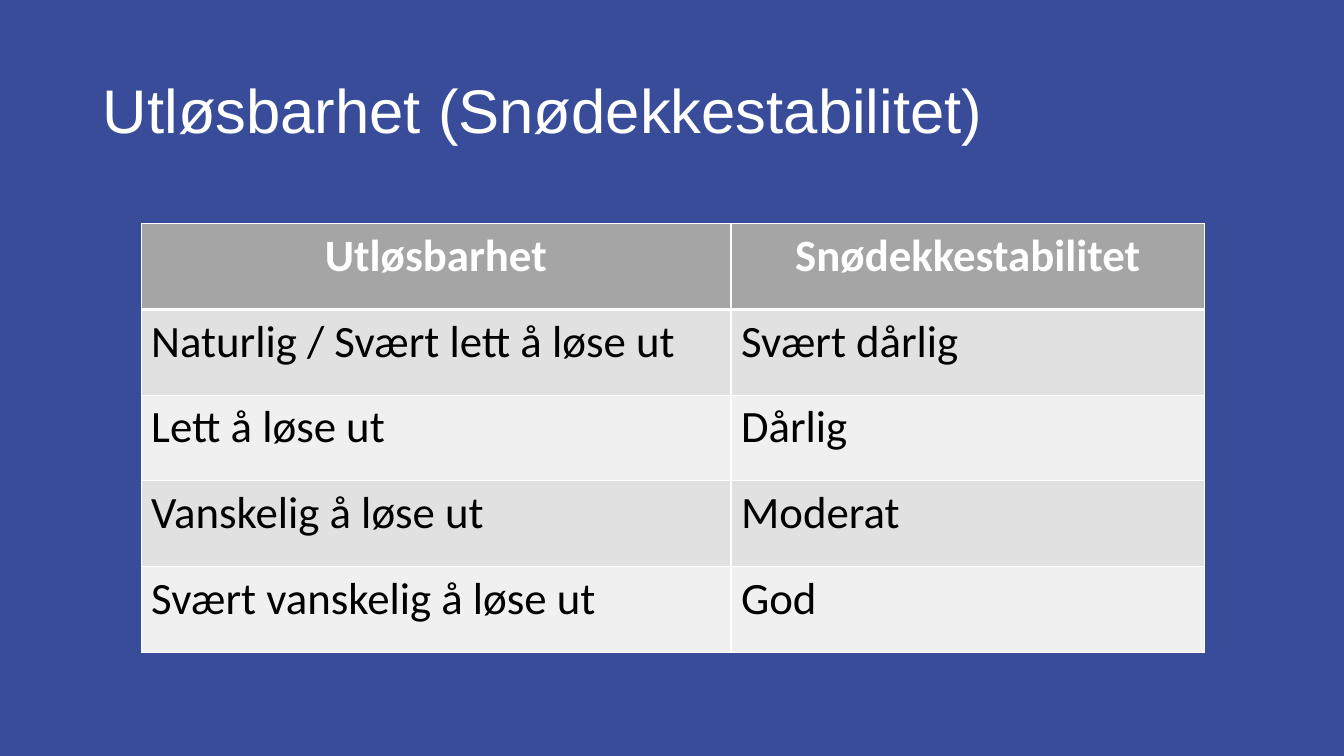
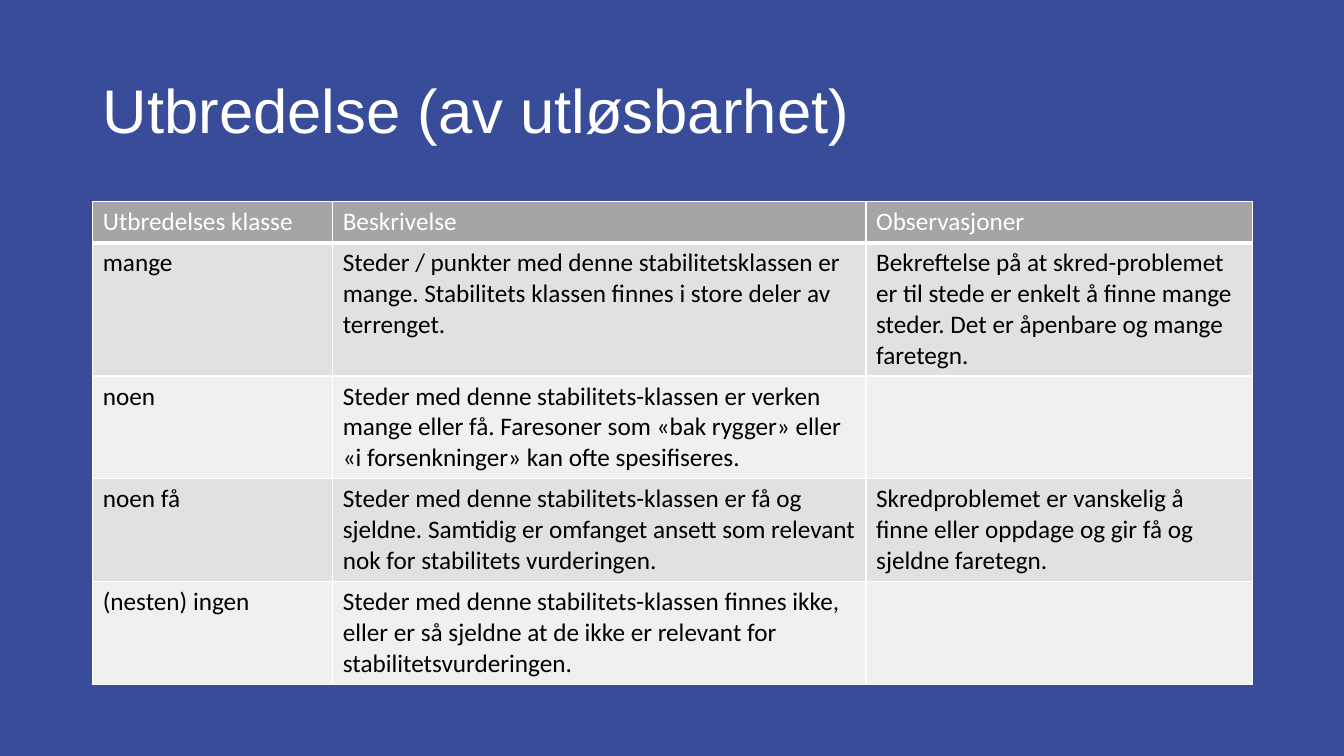
import pptx
import pptx.dml.color
import pptx.enum.text
import pptx.oxml
import pptx.oxml.ns
import pptx.util

Inches = pptx.util.Inches
ALIGN = pptx.enum.text.PP_ALIGN
ANCHOR = pptx.enum.text.MSO_ANCHOR

BLUE, WHITE, BLACK = "384C99", "FFFFFF", "000000"
HEADER_GREY = "A5A5A5"
BAND_GREYS = ("E1E1E1", "F0F0F0")
TITLE_BOX = (0.92, 0.4, 11.5, 1.45)
THIN, THICK = 1, 3

STABILITY_ROWS = [
    ("Utløsbarhet", "Snødekkestabilitet"),
    ("Naturlig / Svært lett å løse ut", "Svært dårlig"),
    ("Lett å løse ut", "Dårlig"),
    ("Vanskelig å løse ut", "Moderat"),
    ("Svært vanskelig å løse ut", "God"),
]
SPREAD_ROWS = [
    ("Utbredelses klasse", "Beskrivelse", "Observasjoner"),
    (
        "mange",
        "Steder / punkter med denne stabilitetsklassen er mange. "
        "Stabilitets klassen finnes i store deler av terrenget.",
        "Bekreftelse på at skred-problemet er til stede er enkelt å finne mange steder. "
        "Det er åpenbare og mange faretegn.",
    ),
    (
        "noen",
        "Steder med denne stabilitets-klassen er verken mange eller få. "
        "Faresoner som «bak rygger» eller «i forsenkninger» kan ofte spesifiseres.",
        "",
    ),
    (
        "noen få",
        "Steder med denne stabilitets-klassen er få og sjeldne. "
        "Samtidig er omfanget ansett som relevant nok for stabilitets vurderingen.",
        "Skredproblemet er vanskelig å finne eller oppdage og gir få og sjeldne faretegn.",
    ),
    (
        "(nesten) ingen",
        "Steder med denne stabilitets-klassen finnes ikke, "
        "eller er så sjeldne at de ikke er relevant for stabilitetsvurderingen.",
        "",
    ),
]


def paint(fill, color):
    """Give a fill one solid colour."""
    fill.solid()
    fill.fore_color.rgb = pptx.dml.color.RGBColor.from_string(color)


def write(frame, text, size, color, font="Calibri", bold=False, align=ALIGN.LEFT, spacing=None):
    """Put one formatted paragraph in a text frame."""
    frame.text = text
    paragraph = frame.paragraphs[0]
    paragraph.alignment = align
    if spacing:
        paragraph.line_spacing = spacing
    paragraph.font.name = font
    paragraph.font.size = pptx.util.Pt(size)
    paragraph.font.bold = bold
    paint(paragraph.font.fill, color)


def add_borders(cell, top, bottom):
    """Draw white lines round a cell, with the given top and bottom widths."""
    properties = cell._tc.get_or_add_tcPr()
    for side, width in (("L", THIN), ("R", THIN), ("T", top), ("B", bottom)):
        properties.append(pptx.oxml.parse_xml(
            f'<a:ln{side} {pptx.oxml.ns.nsdecls("a")} w="{pptx.util.Pt(width)}">'
            f'<a:solidFill><a:srgbClr val="{WHITE}"/></a:solidFill></a:ln{side}>'
        ))


def add_titled_slide(deck, title):
    """Add a slide with the shared title style."""
    slide = deck.slides.add_slide(deck.slide_layouts.get_by_name("Title Only"))
    heading = slide.shapes.title
    heading.left, heading.top, heading.width, heading.height = map(Inches, TITLE_BOX)
    write(heading.text_frame, title, 44, WHITE, font="Arial", spacing=0.9)
    heading.text_frame.vertical_anchor = ANCHOR.MIDDLE
    return slide


def add_class_table(slide, left, top, widths, heights, rows, size, **header_format):
    """Place a banded table with a grey header row."""
    box = map(Inches, (left, top, sum(widths), sum(heights)))
    table = slide.shapes.add_table(len(rows), len(widths), *box).table
    table.horz_banding = False
    for column, width in zip(table.columns, widths):
        column.width = Inches(width)
    for index, (row, height, texts) in enumerate(zip(table.rows, heights, rows)):
        row.height = Inches(height)
        is_header = index == 0
        background = HEADER_GREY if is_header else BAND_GREYS[(index - 1) % 2]
        text_format = header_format if is_header else {}
        for cell, text in zip(row.cells, texts):
            add_borders(cell, THICK if index == 1 else THIN, THICK if is_header else THIN)
            paint(cell.fill, background)
            write(cell.text_frame, text, size, WHITE if is_header else BLACK, **text_format)


def main():
    """Build and save the deck."""
    deck = pptx.Presentation()
    deck.slide_width, deck.slide_height = Inches(13.33), Inches(7.5)
    paint(deck.slide_master.background.fill, BLUE)

    stability = add_titled_slide(deck, "Utløsbarhet (Snødekkestabilitet)")
    add_class_table(stability, 1.4, 2.22, (5.85, 4.7), [0.85] * 5, STABILITY_ROWS, 32,
                    bold=True, align=ALIGN.CENTER)

    spread = add_titled_slide(deck, "Utbredelse (av utløsbarhet)")
    add_class_table(spread, 0.92, 2, (2.38, 5.29, 3.83), [0.41, 1.32] + [1.02] * 3,
                    SPREAD_ROWS, 18)

    deck.save("out.pptx")


if __name__ == "__main__":
    main()
